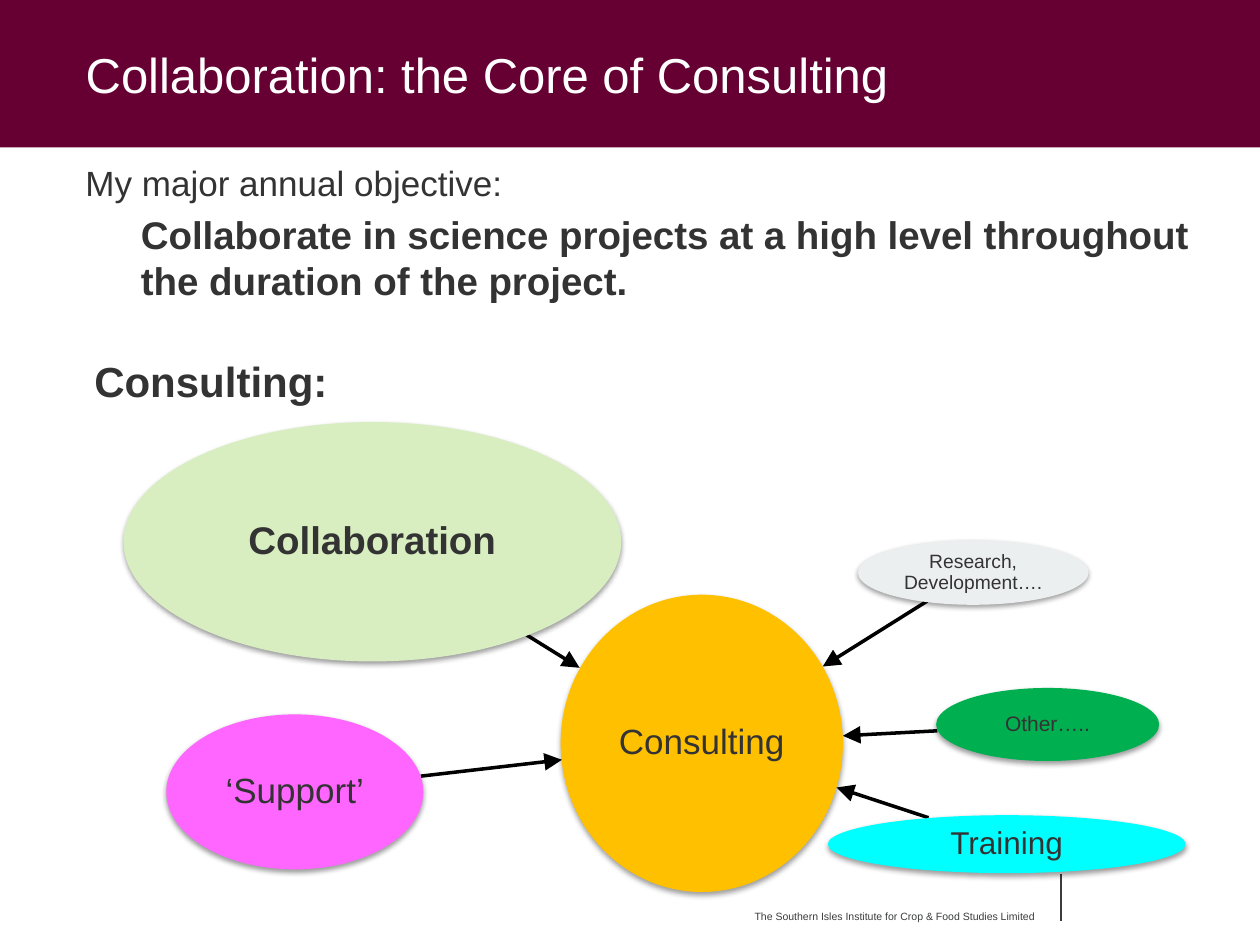
import pptx
import pptx.util
import pptx.dml.color
import pptx.enum.shapes
import pptx.enum.text
import pptx.oxml
import pptx.oxml.ns
from dataclasses import dataclass

Inches = pptx.util.Inches
Pt = pptx.util.Pt
ANCHOR = pptx.enum.text.MSO_ANCHOR
ALIGN = pptx.enum.text.PP_ALIGN
SHAPE = pptx.enum.shapes.MSO_SHAPE
NAMESPACE = pptx.oxml.ns.nsdecls("a")


@dataclass(frozen=True)
class Theme:
    font: str = "Arial"
    band: str = "660033"
    title: str = "FFFFFF"
    text: str = "333333"
    footer: str = "3B3D3C"
    arrow: str = "000000"
    title_size: float = 28
    heading_size: float = 24
    strong_size: float = 22
    body_size: float = 20
    footer_size: float = 6


THEME = Theme()
WIDTH, HEIGHT, BAND_HEIGHT = 10, 7.5, 1.17
MARGIN = 0.58

TITLE = "Collaboration: the Core of Consulting"
OBJECTIVE = [
    ("My major annual objective:", THEME.body_size, False, 0, 0),
    ("Collaborate in science projects at a high level throughout the duration of the project.",
     THEME.strong_size, True, 0.44, 4.3),
]
HEADING = "Consulting:"
FOOTER = "The Southern Isles Institute for Crop & Food Studies Limited"

HUB = ("Consulting", (4.45, 4.72, 2.24, 2.36), "FFC000", THEME.body_size, False)
CONTRIBUTORS = [
    ("Collaboration", (0.98, 3.35, 3.95, 1.9), "D8EEC0", THEME.strong_size, True),
    ("Other…..", (7.43, 5.46, 1.77, 0.58), "00B050", 12, False),
    ("Research, Development….", (6.81, 4.29, 1.83, 0.51), "ECEFF0", 11, False),
    ("Training", (6.57, 6.47, 2.84, 0.46), "00FFFF", 18, False),
    ("‘Support’", (1.32, 5.67, 2.04, 1.23), "FF66FF", THEME.body_size, False),
]
ARROWS_TO_HUB = [
    ((4.18, 5.04), (4.6, 5.3)),
    ((7.44, 5.8), (6.69, 5.84)),
    ((7.36, 4.77), (6.53, 5.29)),
    ((7.37, 6.49), (6.64, 6.25)),
    ((3.34, 6.16), (4.46, 6.03)),
]


def color(value):
    return pptx.dml.color.RGBColor.from_string(value)


def place(values):
    return [Inches(value) for value in values]


def style(paragraph, size, tint=THEME.text, bold=False):
    font = paragraph.font
    font.name, font.size, font.bold = THEME.font, Pt(size), bold
    font.color.rgb = color(tint)


def add_text(slide, box, text, size, tint=THEME.text, bold=False, wrap=True):
    frame = slide.shapes.add_textbox(*place(box)).text_frame
    frame.word_wrap = wrap
    frame.text = text
    style(frame.paragraphs[0], size, tint, bold)
    return frame


def add_filled(slide, kind, box, fill):
    shape = slide.shapes.add_shape(kind, *place(box))
    shape.shadow.inherit = False
    shape.fill.solid()
    shape.fill.fore_color.rgb = color(fill)
    shape.line.fill.background()
    return shape


def add_ellipse(slide, text, box, fill, size, bold):
    ellipse = add_filled(slide, SHAPE.OVAL, box, fill)
    effects = ellipse._element.spPr.find(pptx.oxml.ns.qn("a:effectLst"))
    effects.append(pptx.oxml.parse_xml(
        f'<a:outerShdw {NAMESPACE} blurRad="{Pt(3.1)}" dist="{Pt(1.6)}" dir="5400000" rotWithShape="0">'
        '<a:srgbClr val="000000"><a:alpha val="38000"/></a:srgbClr></a:outerShdw>'))
    frame = ellipse.text_frame
    frame.word_wrap = True
    frame.vertical_anchor = ANCHOR.MIDDLE
    frame.margin_left = frame.margin_right = Inches(0.01)
    frame.margin_top = frame.margin_bottom = Inches(0.01)
    frame.text = text
    paragraph = frame.paragraphs[0]
    paragraph.alignment = ALIGN.CENTER
    paragraph.line_spacing = 0.9
    style(paragraph, size, bold=bold)


def add_line(slide, start, end, tint, width, arrow=False):
    line = slide.shapes.add_connector(
        pptx.enum.shapes.MSO_CONNECTOR.STRAIGHT, *place(start + end))
    line.line.color.rgb = color(tint)
    line.line.width = Pt(width)
    if arrow:
        line.line._get_or_add_ln().append(pptx.oxml.parse_xml(
            f'<a:tailEnd {NAMESPACE} type="triangle" w="lg" len="lg"/>'))
    line._element.spPr.append(pptx.oxml.parse_xml(f"<a:effectLst {NAMESPACE}/>"))


def add_title(slide):
    band = add_filled(slide, SHAPE.RECTANGLE, (0, 0, WIDTH, BAND_HEIGHT), THEME.band)
    slide.shapes._spTree.insert(2, band._element)
    title = slide.shapes.title
    title.left, title.top, title.width, title.height = place((MARGIN, 0, 7.75, BAND_HEIGHT))
    title.text_frame.text = TITLE
    title.text_frame.vertical_anchor = ANCHOR.MIDDLE
    paragraph = title.text_frame.paragraphs[0]
    paragraph.alignment = ALIGN.LEFT
    style(paragraph, THEME.title_size, THEME.title)


def add_objective(slide):
    frame = slide.shapes.add_textbox(*place((MARGIN, 1.23, 9.14, 1.4))).text_frame
    frame.word_wrap = True
    for index, (text, size, bold, indent, space) in enumerate(OBJECTIVE):
        paragraph = frame.add_paragraph() if index else frame.paragraphs[0]
        paragraph.text = text
        paragraph._p.get_or_add_pPr().set("marL", str(Inches(indent)))
        paragraph.space_before = Pt(space)
        style(paragraph, size, bold=bold)


def main():
    presentation = pptx.Presentation()
    presentation.slide_width, presentation.slide_height = place((WIDTH, HEIGHT))
    slide = presentation.slides.add_slide(presentation.slide_layouts[5])

    add_title(slide)
    add_text(slide, (5.89, 7.17, 2.5, 0.25), FOOTER, THEME.footer_size, THEME.footer)
    add_line(slide, (8.42, 6.94), (8.42, 7.31), THEME.footer, 0.75)
    add_objective(slide)

    add_ellipse(slide, *HUB)
    for start, end in ARROWS_TO_HUB:
        add_line(slide, start, end, THEME.arrow, 2, arrow=True)
    for contributor in CONTRIBUTORS:
        add_ellipse(slide, *contributor)
    add_text(slide, (0.65, 2.77, 2.07, 0.5), HEADING, THEME.heading_size, bold=True, wrap=False)

    presentation.save("out.pptx")


if __name__ == "__main__":
    main()
